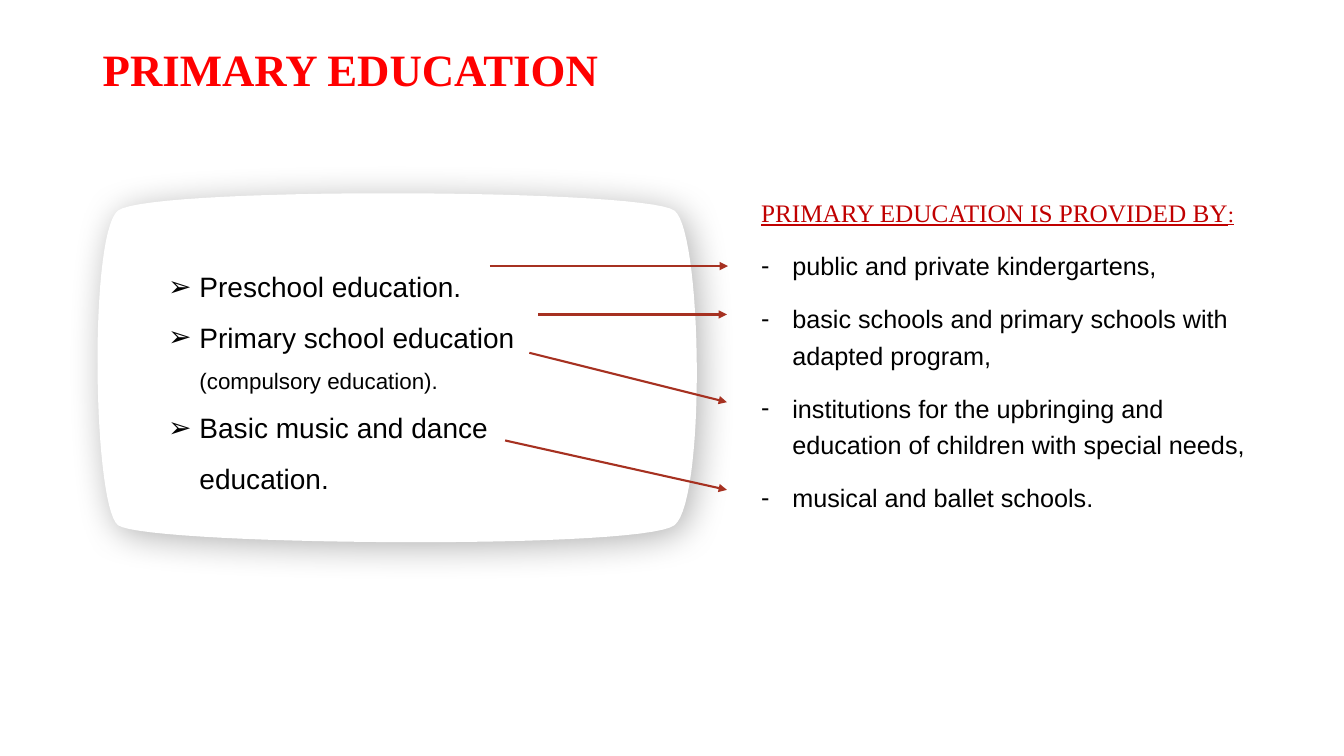
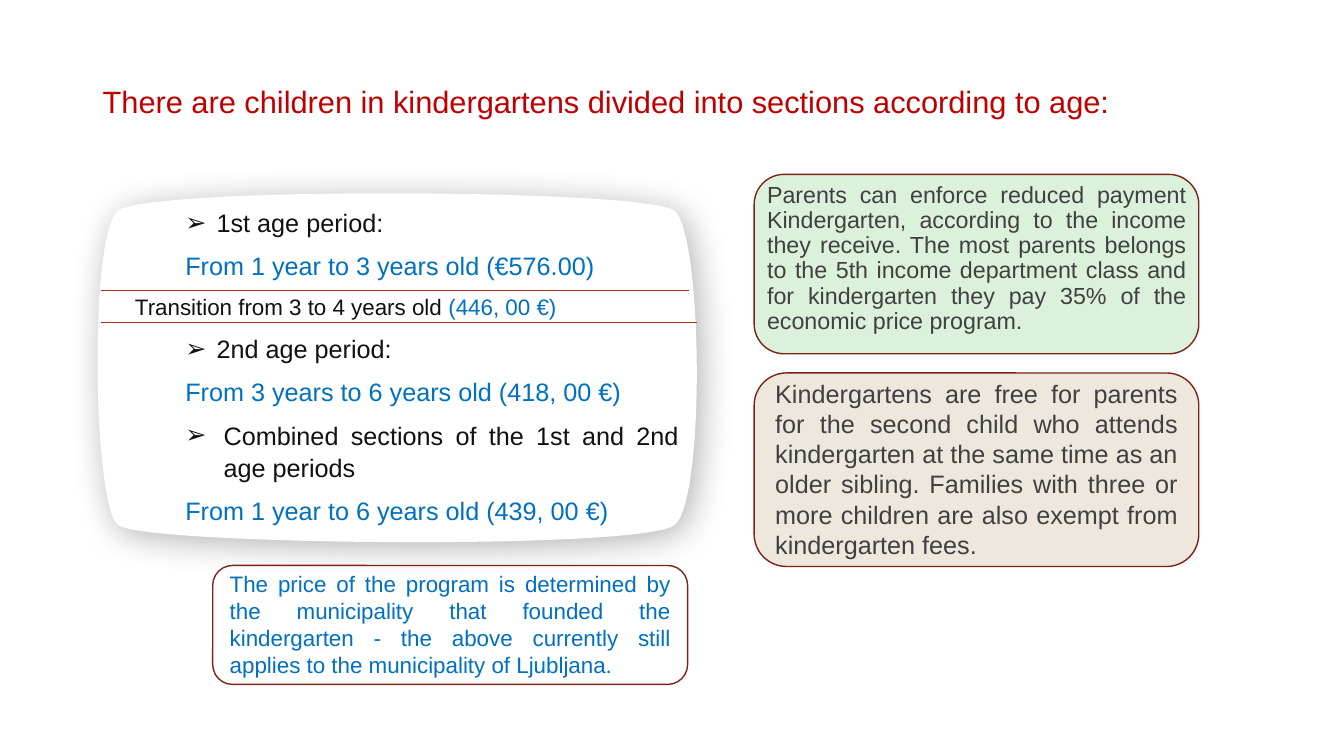
from lxml import etree
from pptx import Presentation, util as u
from pptx.dml.color import RGBColor
from pptx.enum import shapes, text
from pptx.oxml import parse_xml
from pptx.oxml.ns import nsdecls, qn

# Shared look: 100 px to the inch
PX = 9144
INK = {
    "white": "FFFFFF", "black": "000000", "dark": "111111", "grey": "404040",
    "red": "FF0000", "wine": "C00000", "blue": "0070C0", "line": "A63121",
    "edge": "7B2418", "green": "DCF1DC", "sand": "EDE7DD",
}
SANS, SERIF = "Arial", "Times New Roman"
LEFT, JUST = text.PP_ALIGN.LEFT, text.PP_ALIGN.JUSTIFY
ARROW = "➢"


def emu(*nums):
    return [u.Emu(round(n * PX)) for n in nums]


def color(name):
    return RGBColor.from_string(INK[name])


def para(*runs, left=0, hang=0, mark=None, **style):
    """Describe a paragraph; each run is (words, size, ink)."""
    return dict(runs=runs, left=left, hang=hang, mark=mark, **style)


def fill_para(p, left, hang, mark, runs, align=LEFT, space=1.0,
              before=0, after=0, font=SANS, bold=False, under=False):
    props = p._p.get_or_add_pPr()
    props.set("marL", str(left * PX))
    props.set("indent", str(-hang * PX))
    if mark:
        etree.SubElement(props, qn("a:buFont")).set("typeface", SANS)
        etree.SubElement(props, qn("a:buChar")).set("char", mark)
    else:
        etree.SubElement(props, qn("a:buNone"))
    p.alignment, p.line_spacing = align, space
    p.space_before, p.space_after = u.Pt(before), u.Pt(after)
    for words, size, ink in runs:
        run = p.add_run()
        run.text = words
        face = run.font
        face.name, face.size, face.bold = font, u.Pt(size), bold
        face.underline = under
        face.color.rgb = color(ink)


def add_text(slide, box, paras, top=5, foot=5, low=False):
    frame = slide.shapes.add_textbox(*emu(*box)).text_frame
    frame.word_wrap = True
    frame.margin_top, frame.margin_bottom = emu(top, foot)
    if low:
        frame.vertical_anchor = text.MSO_ANCHOR.BOTTOM
    for i, item in enumerate(paras):
        p = frame.add_paragraph() if i else frame.paragraphs[0]
        fill_para(p, **item)


def add_title(slide, box, words, size, ink, **style):
    add_text(slide, box, [para((words, size, ink), space=0.9, **style)],
             foot=60, low=True)


def add_line(slide, start, end, width, head=False):
    line = slide.shapes.add_connector(
        shapes.MSO_CONNECTOR.STRAIGHT, *emu(*start, *end))
    line.line.color.rgb = color("line")
    line.line.width = u.Pt(width)
    if head:
        tip = etree.SubElement(line.line._get_or_add_ln(), qn("a:tailEnd"))
        tip.set("type", "triangle")
    etree.SubElement(line._element.spPr, qn("a:effectLst"))


def add_card(slide, box):
    """Bulging white card with a soft shadow."""
    x, y, w, h = box
    start = (581, 336)
    curves = [
        ((550, 361), (55, 356), (29, 336)),
        ((4, 316), (0, 47), (29, 24)),
        ((59, 0), (553, 2), (581, 24)),
        ((609, 46), (612, 312), (581, 336)),
    ]
    dots, here = [], start
    for one, two, end in curves:
        for t in (i / 30 for i in range(1, 31)):
            s = 1 - t
            dots.append(tuple(
                s**3 * a + 3 * s * s * t * b + 3 * s * t * t * c + t**3 * d
                for a, b, c, d in zip(here, one, two, end)))
        here = end

    def place(dot):
        return emu(x + dot[0] * w / 612, y + dot[1] * h / 360)

    pen = slide.shapes.build_freeform(*place(start))
    pen.add_line_segments([place(dot) for dot in dots])
    card = pen.convert_to_shape()
    card.fill.solid()
    card.fill.fore_color.rgb = color("white")
    card.line.fill.background()
    card._element.spPr.append(parse_xml(
        f'<a:effectLst {nsdecls("a")}>'
        f'<a:outerShdw blurRad="{u.Pt(25)}" dist="{u.Pt(5)}" dir="2700000"'
        ' algn="ctr" rotWithShape="0">'
        f'<a:srgbClr val="{INK["black"]}"><a:alpha val="30000"/></a:srgbClr>'
        '</a:outerShdw></a:effectLst>'))


def add_note(slide, box, words, size, ink, fill=None, pad=7, top=5, space=1.0):
    """Rounded frame with justified words inside."""
    x, y, w, h = box
    note = slide.shapes.add_shape(
        shapes.MSO_SHAPE.ROUNDED_RECTANGLE, *emu(*box))
    note.shadow.inherit = False
    if fill:
        note.fill.solid()
        note.fill.fore_color.rgb = color(fill)
    else:
        note.fill.background()
    note.line.color.rgb = color("edge")
    note.line.width = u.Pt(1)
    add_text(slide, (x + pad, y, w - 2 * pad, h),
             [para((words, size, ink), align=JUST, space=space)], top=top)


def new_slide(deck):
    slide = deck.slides.add_slide(deck.slide_layouts[6])
    add_card(slide, (88, 185, 612, 360))
    return slide


# Slide 1: kinds of schooling and who provides them
def add_kinds(slide, box):
    kinds = [
        [("Preschool education.", 20, "black")],
        [("Primary school education ", 20, "black"),
         ("(compulsory education).", 16, "black")],
        [("Basic music and dance education.", 20, "black")],
    ]
    add_text(slide, box, [
        para(*runs, left=31, hang=31, mark=ARROW, space=1.5)
        for runs in kinds], top=50)


def add_hosts(slide, box):
    hosts = [
        "public and private kindergartens,",
        "basic schools and primary schools with adapted program,",
        "institutions for the upbringing and education of children "
        "with special needs,",
        "musical and ballet schools.",
    ]
    head = para(("PRIMARY EDUCATION IS PROVIDED BY", 18, "wine"),
                (":", 16, "wine"), font=SERIF, under=True, space=0.9)
    add_text(slide, box, [head] + [
        para((host, 18, "black"), left=31, hang=31, mark="-",
             space=1.2, before=12) for host in hosts])


def make_kinds(deck):
    slide = new_slide(deck)
    add_title(slide, (92, 40, 1075, 115), "PRIMARY EDUCATION", 32, "red",
              font=SERIF, bold=True)
    add_hosts(slide, (745, 194, 528, 370))
    add_kinds(slide, (157, 201, 472, 277))
    for start, end in [((486, 264), (722, 264)), ((534, 312), (721, 312)),
                       ((525, 350), (721, 399)), ((501, 437), (721, 486))]:
        add_line(slide, start, end, 1.5, head=True)


# Slide 2: age sections and prices
def add_ages(slide, box):
    def row(*runs, **style):
        return para(*runs, align=JUST, space=1.06, after=8, **style)

    def group(words, left=81, hang=31):
        return row((words, 18, "dark"), left=left, hang=hang, mark=ARROW)

    def price(words):
        return row((words, 18, "blue"), left=50)

    x, y, w, h = box
    add_text(slide, box, [
        group("1st age period:"),
        price("From 1 year to 3 years old (€576.00)"),
        row(("Transition from 3 to 4 years old ", 16, "dark"),
            ("(446, 00 €)", 16, "blue")),
        group("2nd age period:"),
        price("From 3 years to 6 years old (418, 00 €)"),
        group("Combined sections of the 1st and 2nd age periods", 88, 38),
        price("From 1 year to 6 years old (439, 00 €)"),
    ])
    # Rules above and below the transition row
    for drop, end in ((89, w), (121, w + 8)):
        add_line(slide, (x - 24, y + drop), (x + end, y + drop), 0.5)


def make_ages(deck):
    slide = new_slide(deck)
    add_title(slide, (92, 61, 1075, 118),
              "There are children in kindergartens divided into sections "
              "according to age:", 22, "wine")
    add_note(slide, (748, 173, 441, 178),
             "Parents can enforce reduced payment Kindergarten, according to "
             "the income they receive. The most parents belongs to the 5th "
             "income department class and for kindergarten they pay 35% of "
             "the economic price program.",
             16.6, "grey", "green", pad=3, top=9, space=0.9)
    add_note(slide, (748, 370, 441, 192),
             "Kindergartens are free for parents for the second child who "
             "attends kindergarten at the same time as an older sibling. "
             "Families with three or more children are also exempt from "
             "kindergarten fees.", 18, "grey", "sand", pad=11)
    add_ages(slide, (124, 199, 559, 329))
    add_note(slide, (211, 561, 471, 118),
             "The price of the program is determined by the municipality "
             "that founded the kindergarten - the above currently still "
             "applies to the municipality of Ljubljana.", 16, "blue")


def main():
    deck = Presentation()
    deck.slide_width, deck.slide_height = emu(1333, 750)
    make_kinds(deck)
    make_ages(deck)
    deck.save("out.pptx")


if __name__ == "__main__":
    main()
